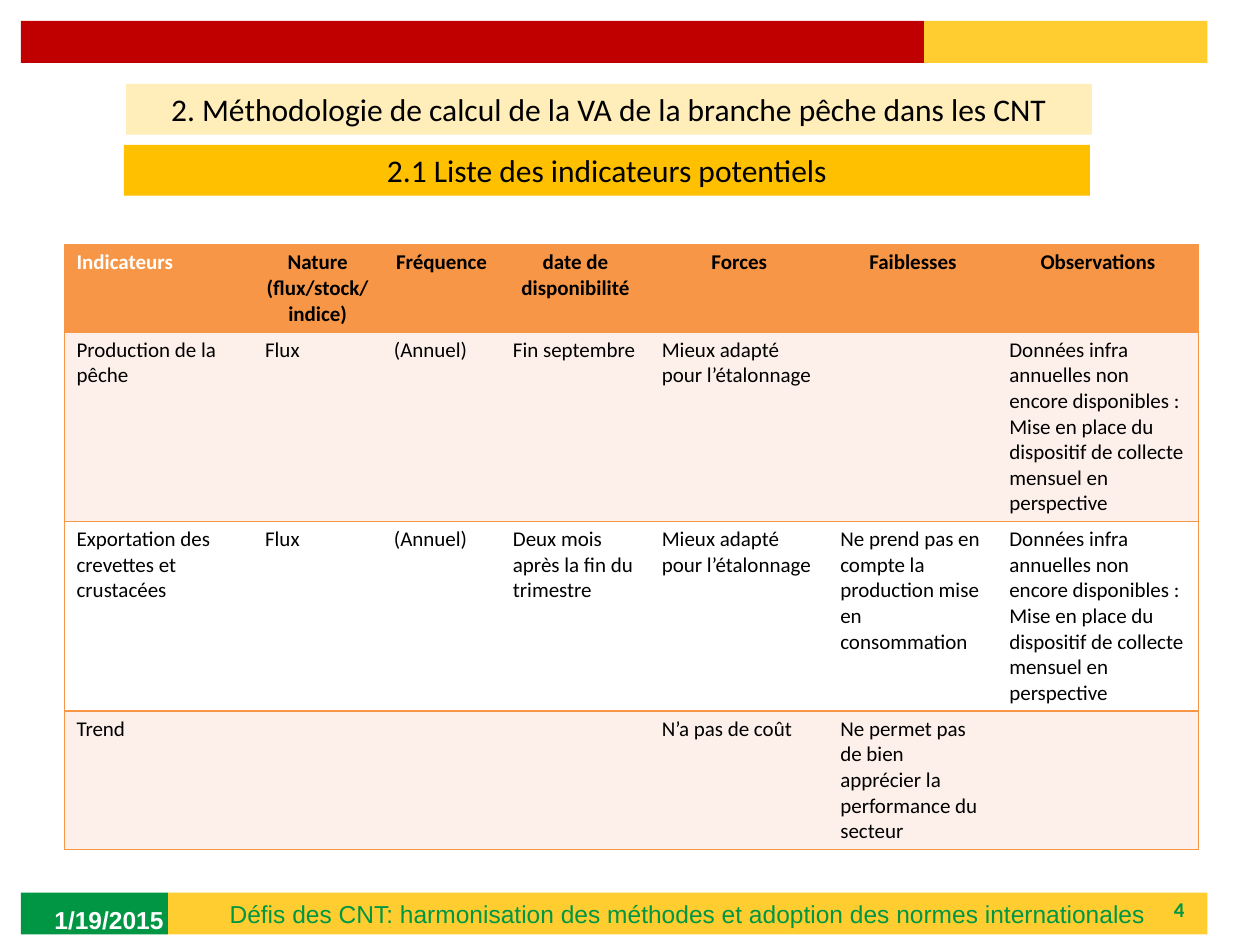
"""Build the slide listing the potential fishery indicators for quarterly accounts."""
from dataclasses import dataclass
from typing import Optional

from lxml.etree import SubElement
from pptx import Presentation
from pptx.dml.color import RGBColor
from pptx.enum.shapes import MSO_SHAPE as Preset
from pptx.enum.text import MSO_ANCHOR as Anchor, PP_ALIGN as Align
from pptx.oxml.ns import qn
from pptx.util import Pt


@dataclass(frozen=True)
class Theme:
    green: str = "009644"
    yellow: str = "FFCD2F"
    red: str = "C00000"
    cream: str = "FFEEB9"
    gold: str = "FFC000"
    orange: str = "F79646"
    peach: str = "FDEFE9"
    white: str = "FFFFFF"
    black: str = "000000"
    body_font: str = "Calibri"
    footer_font: str = "Arial"
    title_size: float = 18
    footer_size: float = 14
    table_size: float = 12


THEME = Theme()


@dataclass(frozen=True)
class Label:
    text: str
    size: float
    color: str
    font: str = THEME.body_font
    bold: bool = False
    align: Align = Align.LEFT
    anchor: Anchor = Anchor.MIDDLE


@dataclass(frozen=True)
class Box:
    left: float
    top: float
    width: float
    height: float
    fill: Optional[str] = None
    label: Optional[Label] = None


FOOTER = Label("Défis des CNT: harmonisation des méthodes et adoption des normes internationales",
               THEME.footer_size, THEME.green, THEME.footer_font, align=Align.CENTER)
PAGE_NUMBER = Label("4", THEME.table_size, THEME.green, bold=True, align=Align.RIGHT)
DATE = Label("1/19/2015", THEME.footer_size, THEME.white, THEME.footer_font, bold=True)


def title(text: str) -> Label:
    return Label(text, THEME.title_size, THEME.black, align=Align.CENTER, anchor=Anchor.TOP)


BOXES = [
    Box(12, 510, 84, 24, THEME.green),
    Box(96, 510, 594, 24, THEME.yellow, FOOTER),
    Box(516, 510, 168, 19.5, label=PAGE_NUMBER),
    Box(12, 12, 516, 24, THEME.red),
    Box(528, 12, 162, 24, THEME.yellow),
    Box(24, 511.5, 168, 28.5, label=DATE),
    Box(72, 48, 552, 29, THEME.cream,
        title("2. Méthodologie de calcul de la VA de la branche pêche dans les CNT")),
    Box(70.8, 82.8, 552, 29, THEME.gold, title("2.1 Liste des indicateurs potentiels")),
]

TABLE_LEFT, TABLE_TOP = 37, 139.8
COLUMN_WIDTHS = [107.7, 73.7, 68, 85.1, 102, 96.6, 114.9]
ROW_HEIGHTS = [50, 108.3, 108.3, 79.2]
CELL_MARGIN_X, CELL_MARGIN_Y = 6.8, 3
CALIBRATION = "Mieux adapté pour l’étalonnage"
MONTHLY_PLAN = ("Données infra annuelles non encore disponibles :\n"
                "Mise en place du dispositif de collecte mensuel en perspective")
ROWS = [
    ["Indicateurs", "Nature (flux/stock/indice)", "Fréquence", "date de disponibilité",
     "Forces", "Faiblesses", "Observations"],
    ["Production de la pêche", "Flux", "(Annuel)", "Fin septembre", CALIBRATION, "", MONTHLY_PLAN],
    ["Exportation des crevettes et crustacées", "Flux", "(Annuel)",
     "Deux mois après la fin du trimestre", CALIBRATION,
     "Ne prend pas en compte la production mise en consommation", MONTHLY_PLAN],
    ["Trend", "", "", "", "N’a pas de coût",
     "Ne permet pas de bien apprécier la performance du secteur", ""],
]


def write(frame, label: Label) -> None:
    frame.word_wrap = True
    frame.text = label.text
    for paragraph in frame.paragraphs:
        paragraph.alignment = label.align
        font = paragraph.font
        font.name, font.size, font.bold = label.font, Pt(label.size), label.bold
        font.color.rgb = RGBColor.from_string(label.color)


def draw_box(slide, box: Box) -> None:
    place = [Pt(value) for value in (box.left, box.top, box.width, box.height)]
    if box.fill:
        shape = slide.shapes.add_shape(Preset.RECTANGLE, *place)
        shape.shadow.inherit = False
        shape.fill.solid()
        shape.fill.fore_color.rgb = RGBColor.from_string(box.fill)
        shape.line.fill.background()
    else:
        shape = slide.shapes.add_textbox(*place)
    if box.label:
        write(shape.text_frame, box.label)
        shape.text_frame.vertical_anchor = box.label.anchor


def set_borders(cell, visible: dict[str, bool]) -> None:
    properties = cell._tc.get_or_add_tcPr()
    for position, (side, shown) in enumerate(visible.items()):
        line = SubElement(properties, qn(f"a:ln{side}"), w=str(Pt(1)))
        if shown:
            fill = SubElement(line, qn("a:solidFill"))
            SubElement(fill, qn("a:srgbClr"), val=THEME.orange)
        else:
            SubElement(line, qn("a:noFill"))
        properties.insert(position, line)


def draw_table(slide) -> None:
    table = slide.shapes.add_table(
        len(ROWS), len(COLUMN_WIDTHS), Pt(TABLE_LEFT), Pt(TABLE_TOP),
        Pt(sum(COLUMN_WIDTHS)), Pt(sum(ROW_HEIGHTS))).table
    table.first_row = table.horz_banding = False
    for column, width in zip(table.columns, COLUMN_WIDTHS):
        column.width = Pt(width)
    last_column = len(COLUMN_WIDTHS) - 1
    for row_index, (texts, height) in enumerate(zip(ROWS, ROW_HEIGHTS)):
        table.rows[row_index].height = Pt(height)
        header = row_index == 0
        band = THEME.peach if row_index % 2 else THEME.white
        for column_index, text in enumerate(texts):
            cell = table.cell(row_index, column_index)
            cell.margin_left = cell.margin_right = Pt(CELL_MARGIN_X)
            cell.margin_top = cell.margin_bottom = Pt(CELL_MARGIN_Y)
            cell.fill.solid()
            cell.fill.fore_color.rgb = RGBColor.from_string(THEME.orange if header else band)
            corner = header and column_index == 0
            write(cell.text_frame, Label(
                text, THEME.table_size, THEME.white if corner else THEME.black, bold=header,
                align=Align.CENTER if header and not corner else Align.LEFT))
            set_borders(cell, {"L": column_index == 0, "R": column_index == last_column,
                               "T": True, "B": True})


def main() -> None:
    presentation = Presentation()
    presentation.slide_width, presentation.slide_height = Pt(720), Pt(540)
    slide = presentation.slides.add_slide(presentation.slide_layouts[6])
    for box in BOXES:
        draw_box(slide, box)
    draw_table(slide)
    presentation.save("out.pptx")


if __name__ == "__main__":
    main()
